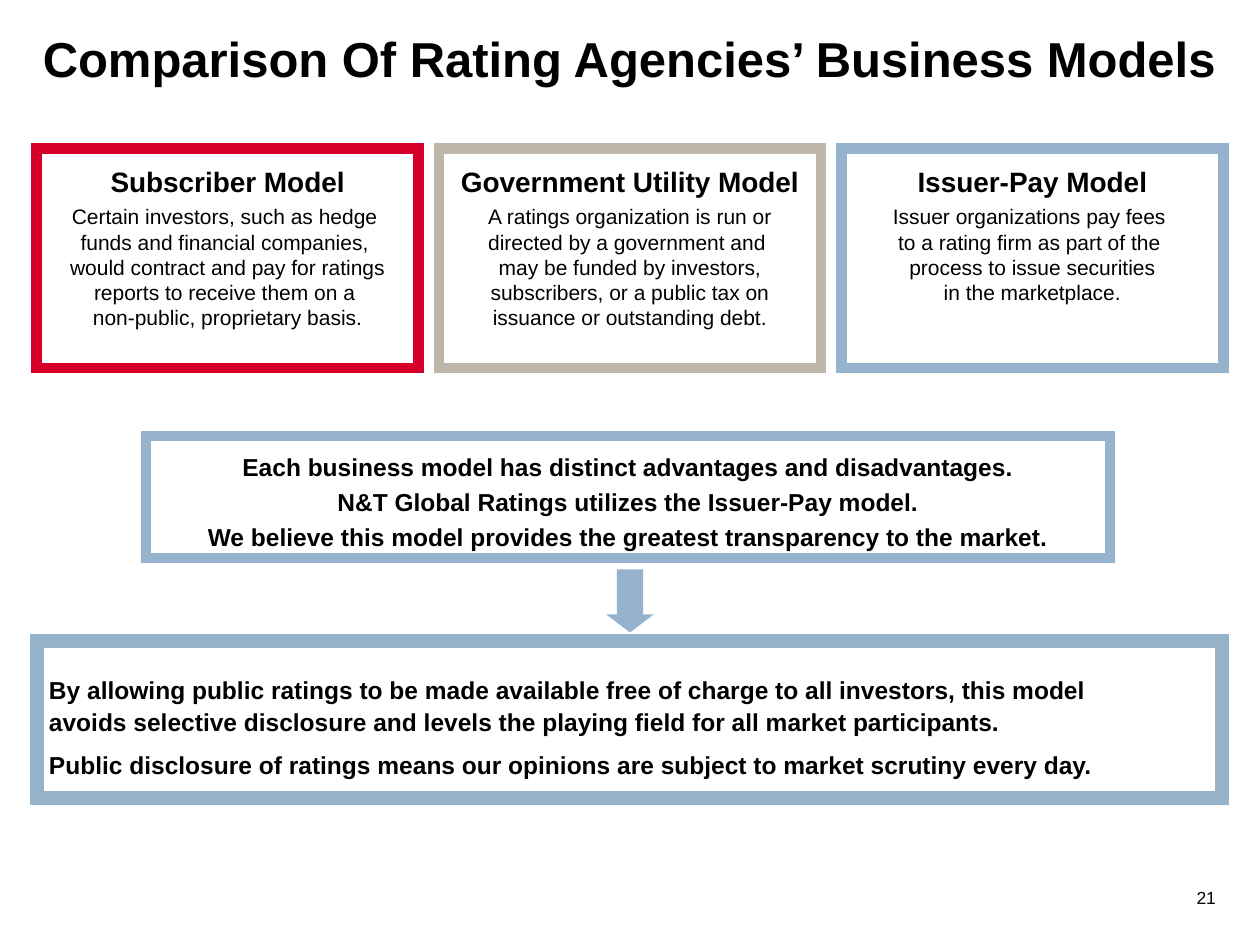
import pptx
import pptx.util
import pptx.dml.color
import pptx.enum.shapes
import pptx.enum.text
import pptx.oxml.ns
import lxml.etree
from dataclasses import dataclass

Inches = pptx.util.Inches
Align = pptx.enum.text.PP_ALIGN
Shape = pptx.enum.shapes.MSO_SHAPE


@dataclass(frozen=True)
class Theme:
    """Colours, font and type sizes of the slide."""
    font: str = "Arial"
    ink: str = "000000"
    red: str = "D6002A"
    stone: str = "BEB7A9"
    blue: str = "95B3CC"
    steel: str = "95B3C9"
    title: int = 28
    heading: int = 16
    statement: int = 14
    body: int = 12
    number: int = 10


THEME = Theme()

MODELS = [
    ("Subscriber Model", THEME.red,
     "Certain investors, such as hedge \nfunds and financial companies, \n"
     "would contract and pay for ratings reports to receive them on a \n"
     "non-public, proprietary basis."),
    ("Government Utility Model", THEME.stone,
     "A ratings organization is run or directed by a government and \n"
     "may be funded by investors, subscribers, or a public tax on issuance or outstanding debt."),
    ("Issuer-Pay Model", THEME.blue,
     "Issuer organizations pay fees \nto a rating firm as part of the \n"
     "process to issue securities\nin the marketplace."),
]
POSITION = [
    "Each business model has distinct advantages and disadvantages.",
    "N&T Global Ratings utilizes the Issuer-Pay model.",
    "We believe this model provides the greatest transparency to the market.",
]
OUTCOME = [
    "By allowing public ratings to be made available free of charge to all investors, this model \n"
    "avoids selective disclosure and levels the playing field for all market participants.",
    "Public disclosure of ratings means our opinions are subject to market scrutiny every day.",
]


def rgb(colour):
    """Turn a hex string into a colour."""
    return pptx.dml.color.RGBColor.from_string(colour)


def write(shape, lines, align=Align.LEFT, insets=(0, 0, 0, 0), gap=0, spacing=None):
    """Fill a shape with (text, size, bold) lines; insets run left, top, right, bottom."""
    frame = shape.text_frame
    frame.word_wrap = True
    frame.vertical_anchor = pptx.enum.text.MSO_ANCHOR.TOP
    frame.margin_left, frame.margin_top, frame.margin_right, frame.margin_bottom = map(Inches, insets)
    for index, (text, size, bold) in enumerate(lines):
        para = frame.add_paragraph() if index else frame.paragraphs[0]
        para.text = text
        para.alignment = align
        para.space_before = pptx.util.Pt(gap if index else 0)
        if spacing:
            para.line_spacing = spacing
        para.font.name = THEME.font
        para.font.size = pptx.util.Pt(size)
        para.font.bold = bold
        para.font.color.rgb = rgb(THEME.ink)


def add_label(page, box, line, align=Align.LEFT):
    """Place a single line of text without a frame."""
    write(page.shapes.add_textbox(*map(Inches, box)), [line], align)


def add_frame(page, box, colour, weight):
    """Draw an unfilled rectangle with a thick, square-cornered border."""
    frame = page.shapes.add_shape(Shape.RECTANGLE, *map(Inches, box))
    frame.shadow.inherit = False
    frame.fill.background()
    frame.line.color.rgb = rgb(colour)
    frame.line.width = pptx.util.Pt(weight)
    outline = frame.line._get_or_add_ln()
    lxml.etree.SubElement(outline, pptx.oxml.ns.qn("a:miter"), lim="800000")
    return frame


def add_models(page, box, gap):
    """Place the business model cards side by side."""
    left, top, width, height = box
    card_width = (width - gap * (len(MODELS) - 1)) / len(MODELS)
    for index, (heading, colour, body) in enumerate(MODELS):
        card_box = (left + index * (card_width + gap), top, card_width, height)
        card = add_frame(page, card_box, colour, 6)
        lines = [(heading, THEME.heading, True), (body, THEME.body, False)]
        write(card, lines, Align.CENTER, (0.15, 0.13, 0.15, 0.15), gap=3)


def add_position(page, box):
    """Place the centred statement of the chosen model."""
    frame = add_frame(page, box, THEME.blue, 6)
    lines = [(text, THEME.statement, True) for text in POSITION]
    write(frame, lines, Align.CENTER, (0.1, 0.13, 0.1, 0.15), gap=3)


def add_arrow(page, box):
    """Draw the arrow that leads down to the outcome."""
    arrow = page.shapes.add_shape(Shape.DOWN_ARROW, *map(Inches, box))
    arrow.shadow.inherit = False
    arrow.adjustments[0] = 0.55
    arrow.adjustments[1] = 0.38
    arrow.fill.solid()
    arrow.fill.fore_color.rgb = rgb(THEME.blue)
    arrow.line.fill.background()


def add_outcome(page, box):
    """Place the left-aligned closing statement."""
    frame = add_frame(page, box, THEME.steel, 8)
    lines = [(text, THEME.statement, True) for text in OUTCOME]
    write(frame, lines, insets=(0.1, 0.24, 0.2, 0.2), gap=6, spacing=1.1)


def main():
    """Build the slide and save it."""
    deck = pptx.Presentation()
    deck.slide_width, deck.slide_height = Inches(10), Inches(7.5)
    page = deck.slides.add_slide(deck.slide_layouts[6])
    add_label(page, (0.34, 0.23, 9.5, 0.94),
              ("Comparison Of Rating Agencies’ Business Models", THEME.title, True))
    add_models(page, (0.29, 1.18, 9.42, 1.74), gap=0.16)
    add_position(page, (1.16, 3.46, 7.65, 0.97))
    add_arrow(page, (4.81, 4.52, 0.38, 0.5))
    add_outcome(page, (0.29, 5.09, 9.41, 1.24))
    add_label(page, (9.42, 7.04, 0.23, 0.28), ("21", THEME.number, False), Align.RIGHT)
    deck.save("out.pptx")


if __name__ == "__main__":
    main()
